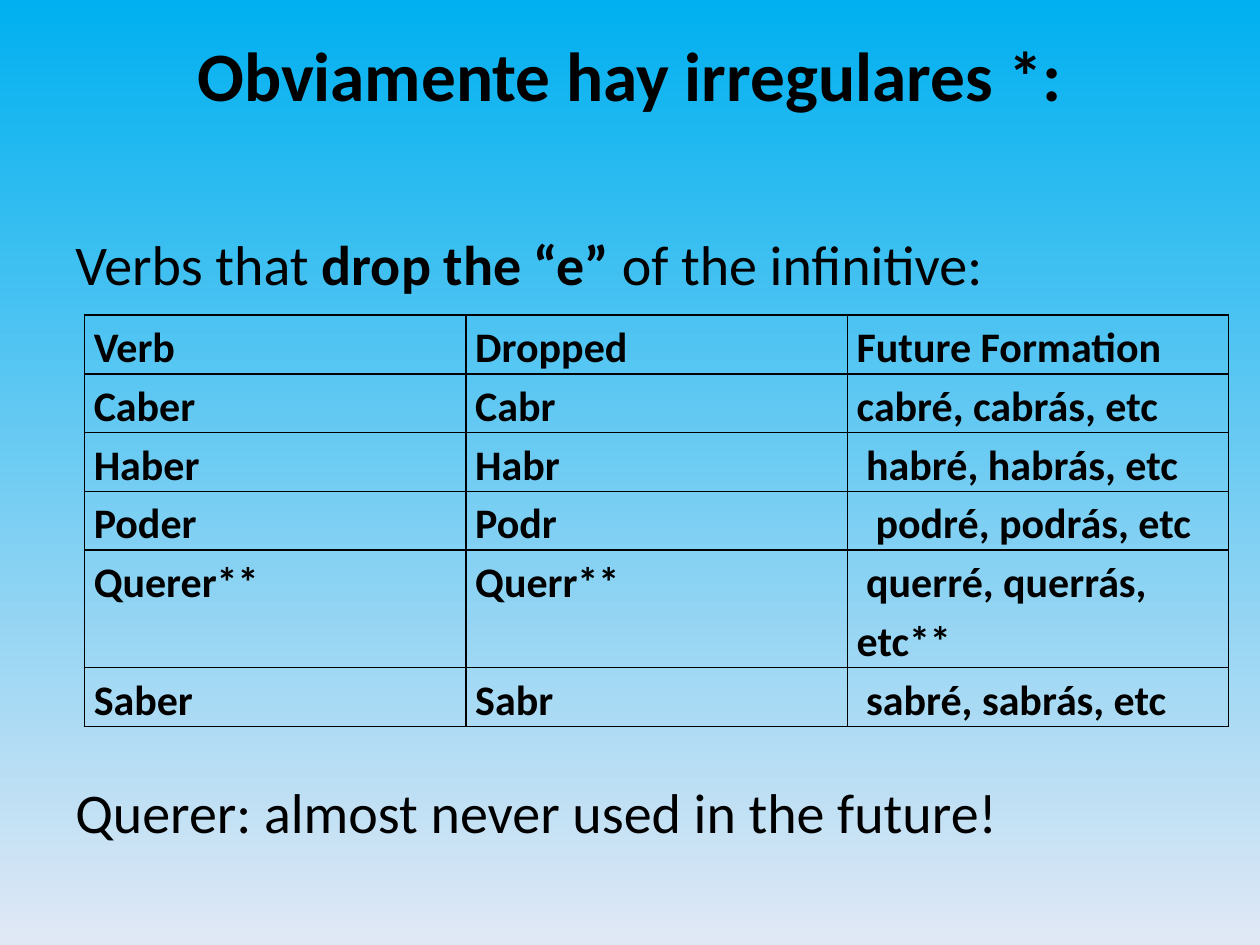
from pptx import Presentation
from pptx.dml.color import RGBColor
from pptx.enum.text import MSO_ANCHOR, PP_ALIGN
from pptx.oxml import parse_xml
from pptx.oxml.ns import nsdecls
from pptx.util import Pt

BLACK = RGBColor(0x00, 0x00, 0x00)
SKY_BLUE = RGBColor(0x00, 0xB0, 0xF0)
PALE_BLUE = RGBColor(0xE1, 0xE8, 0xF5)
FONT = "Calibri"

TITLE_ONLY_LAYOUT = 5
ROW_HEIGHT = 33.6
SPACE_WIDTH = 5.4  # one space in the table's type size

# Verb, shortened stem, future forms, first-line indent in spaces
VERB_ROWS = [
    ("Verb", "Dropped", "Future Formation", 0),
    ("Caber", "Cabr", "cabré, cabrás, etc", 0),
    ("Haber", "Habr", "habré, habrás, etc", 1),
    ("Poder", "Podr", "podré, podrás, etc", 2),
    ("Querer**", "Querr**", "querré, querrás, etc**", 1),
    ("Saber", "Sabr", "sabré, sabrás, etc", 1),
]
TALL_ROW = 4  # its last cell wraps to two lines


def format_run(run, size, bold=False):
    run.font.name = FONT
    run.font.size = Pt(size)
    run.font.bold = bold
    run.font.color.rgb = BLACK


def paint_background(slide):
    fill = slide.background.fill
    fill.gradient()
    fill.gradient_angle = 270
    for stop, color in zip(fill.gradient_stops, (SKY_BLUE, PALE_BLUE)):
        stop.color.rgb = color


def place_title(slide, left, top, width, height):
    title = slide.shapes.title
    title.left, title.top = Pt(left), Pt(top)
    title.width, title.height = Pt(width), Pt(height)
    frame = title.text_frame
    frame.text = "Obviamente hay irregulares *:"
    frame.vertical_anchor = MSO_ANCHOR.MIDDLE
    # The heading sits in the upper half of its box
    frame.margin_top, frame.margin_bottom = Pt(0), Pt(48.4)
    paragraph = frame.paragraphs[0]
    paragraph.alignment = PP_ALIGN.CENTER
    format_run(paragraph.runs[0], 39.6, bold=True)


def place_sentence(slide, left, top, width, height, parts):
    box = slide.shapes.add_textbox(Pt(left), Pt(top), Pt(width), Pt(height))
    box.text_frame.word_wrap = True
    paragraph = box.text_frame.paragraphs[0]
    for text, bold in parts:
        run = paragraph.add_run()
        run.text = text
        format_run(run, 32, bold)


def add_borders(cell):
    properties = cell._tc.get_or_add_tcPr()
    for position, side in enumerate(("lnL", "lnR", "lnT", "lnB")):
        properties.insert(position, parse_xml(
            f'<a:{side} {nsdecls("a")} w="{Pt(1)}"><a:solidFill>'
            f'<a:srgbClr val="{BLACK}"/></a:solidFill></a:{side}>'))


def fill_cell(cell, text, indent):
    cell.text_frame.text = text
    cell.margin_left = cell.margin_right = Pt(5.4)
    cell.margin_top = cell.margin_bottom = Pt(0)
    cell.fill.background()
    add_borders(cell)
    paragraph = cell.text_frame.paragraphs[0]
    paragraph.line_spacing = 1.15
    paragraph._p.get_or_add_pPr().set("indent", str(Pt(indent)))
    format_run(paragraph.runs[0], 24, bold=True)


def place_verb_table(slide, left, top, width):
    height = ROW_HEIGHT * (len(VERB_ROWS) + 1)
    table = slide.shapes.add_table(
        len(VERB_ROWS), 3, Pt(left), Pt(top), Pt(width), Pt(height)).table
    table.first_row = table.horz_banding = False
    for column in table.columns:
        column.width = Pt(width / 3)
    for index, (verb, stem, forms, spaces) in enumerate(VERB_ROWS):
        lines = 2 if index == TALL_ROW else 1
        table.rows[index].height = Pt(ROW_HEIGHT * lines)
        indents = (0, 0, spaces * SPACE_WIDTH)
        for column, text in enumerate((verb, stem, forms)):
            fill_cell(table.cell(index, column), text, indents[column])


def main():
    presentation = Presentation()
    presentation.slide_width, presentation.slide_height = Pt(720), Pt(540)
    layout = presentation.slide_layouts[TITLE_ONLY_LAYOUT]
    slide = presentation.slides.add_slide(layout)

    paint_background(slide)
    place_title(slide, 36, 21.6, 648, 90)
    # Rule above the table, remark below it
    place_sentence(slide, 36, 127.5, 648, 46, [
        ("Verbs that ", False),
        ("drop the “e”", True),
        (" of the infinitive:", False),
    ])
    place_verb_table(slide, 48.2, 180, 654)
    place_sentence(slide, 36, 441, 648, 46, [
        ("Querer: almost never used in the future!", False),
    ])
    presentation.save("out.pptx")


if __name__ == "__main__":
    main()
